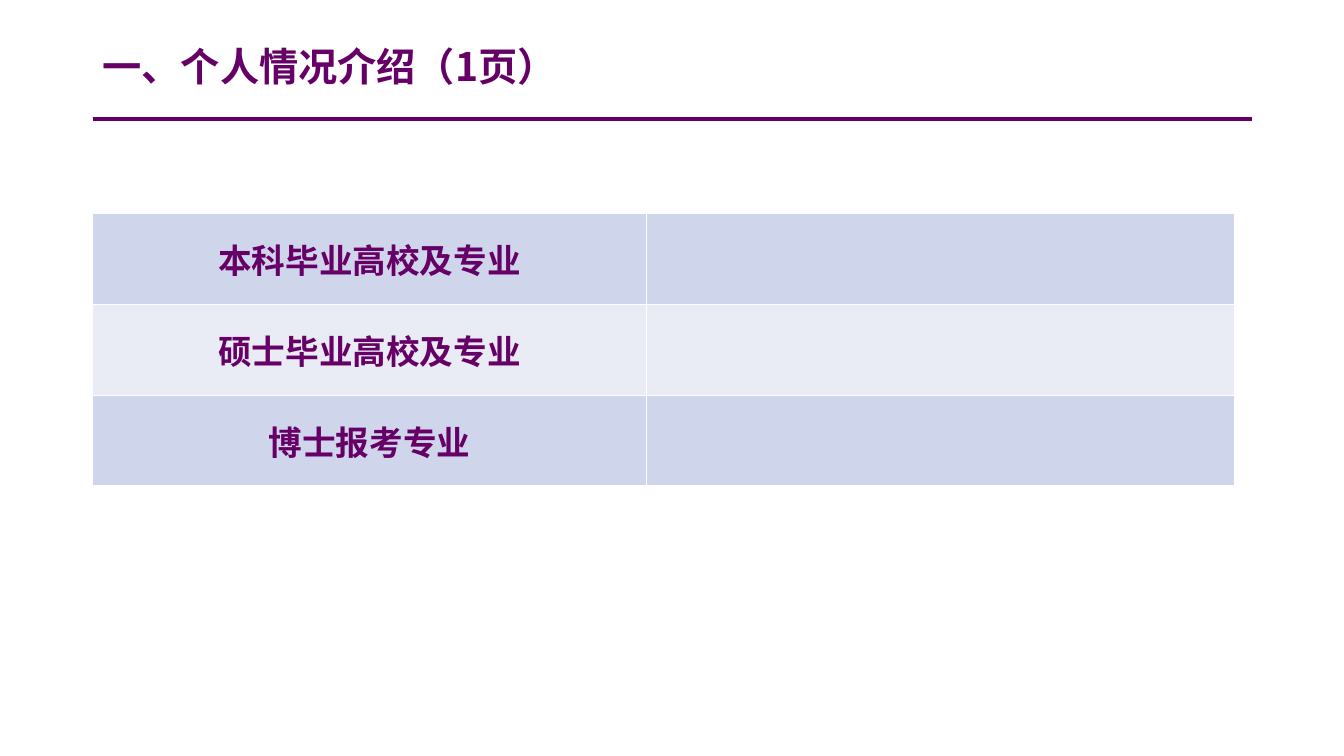
import dataclasses

import lxml.etree
import pptx
import pptx.dml.color
import pptx.enum.shapes
import pptx.enum.text
import pptx.oxml.ns
import pptx.util

Inches = pptx.util.Inches
FONT = "Noto Sans CJK SC"
COLORS = {"purple": "660066", "band_dark": "CFD5EA", "band_light": "E9EBF5"}
LEFT = 0.92
RULE_Y = 1.18
RULE_WIDTH = 11.5
COLUMN_WIDTHS = (5.49, 5.84)
ROW_HEIGHT = 0.9


@dataclasses.dataclass(frozen=True)
class ProfileRow:
    label: str
    fill: str
    value: str = ""


ROWS = (
    ProfileRow("本科毕业高校及专业", "band_dark"),
    ProfileRow("硕士毕业高校及专业", "band_light"),
    ProfileRow("博士报考专业", "band_dark"),
)


def rgb(name: str) -> pptx.dml.color.RGBColor:
    return pptx.dml.color.RGBColor.from_string(COLORS[name])


def style_paragraph(p, size: float) -> None:
    p.font.size = pptx.util.Pt(size)
    p.font.bold = True
    p.font.name = FONT
    p.font.color.rgb = rgb("purple")
    props = p._p.get_or_add_pPr().get_or_add_defRPr()
    ea = lxml.etree.SubElement(props, pptx.oxml.ns.qn("a:ea"))
    ea.set("typeface", FONT)


def add_rule(slide) -> None:
    line = slide.shapes.add_connector(
        pptx.enum.shapes.MSO_CONNECTOR.STRAIGHT,
        Inches(LEFT), Inches(RULE_Y), Inches(LEFT + RULE_WIDTH), Inches(RULE_Y),
    )
    line.line.color.rgb = rgb("purple")
    line.line.width = pptx.util.Pt(3)
    lxml.etree.SubElement(line._element.spPr, pptx.oxml.ns.qn("a:effectLst"))


def add_title(slide, text: str) -> None:
    sp = slide.shapes.add_textbox(
        Inches(LEFT), Inches(0.42), Inches(RULE_WIDTH), Inches(0.53)
    )
    tf = sp.text_frame
    tf.word_wrap = True
    tf.vertical_anchor = pptx.enum.text.MSO_ANCHOR.MIDDLE
    p = tf.paragraphs[0]
    p.text = text
    p.line_spacing = 0.9
    style_paragraph(p, 28)


def add_profile_table(slide, rows: tuple[ProfileRow, ...]) -> None:
    table = slide.shapes.add_table(
        len(rows), len(COLUMN_WIDTHS), Inches(LEFT), Inches(2.12),
        Inches(sum(COLUMN_WIDTHS)), Inches(ROW_HEIGHT * len(rows)),
    ).table
    table.first_row = False
    table.horz_banding = False
    for column, width in zip(table.columns, COLUMN_WIDTHS):
        column.width = Inches(width)
    for i, row in enumerate(rows):
        table.rows[i].height = Inches(ROW_HEIGHT)
        for cell, text in zip(table.rows[i].cells, (row.label, row.value)):
            cell.fill.solid()
            cell.fill.fore_color.rgb = rgb(row.fill)
            cell.vertical_anchor = pptx.enum.text.MSO_ANCHOR.MIDDLE
            p = cell.text_frame.paragraphs[0]
            p.text = text
            p.alignment = pptx.enum.text.PP_ALIGN.CENTER
            style_paragraph(p, 24)


def main() -> None:
    prs = pptx.Presentation()
    prs.slide_width = Inches(13.33)
    prs.slide_height = Inches(7.5)
    slide = prs.slides.add_slide(prs.slide_layouts[6])
    add_rule(slide)
    add_title(slide, "一、个人情况介绍（1页）")
    add_profile_table(slide, ROWS)
    prs.save("out.pptx")


if __name__ == "__main__":
    main()
